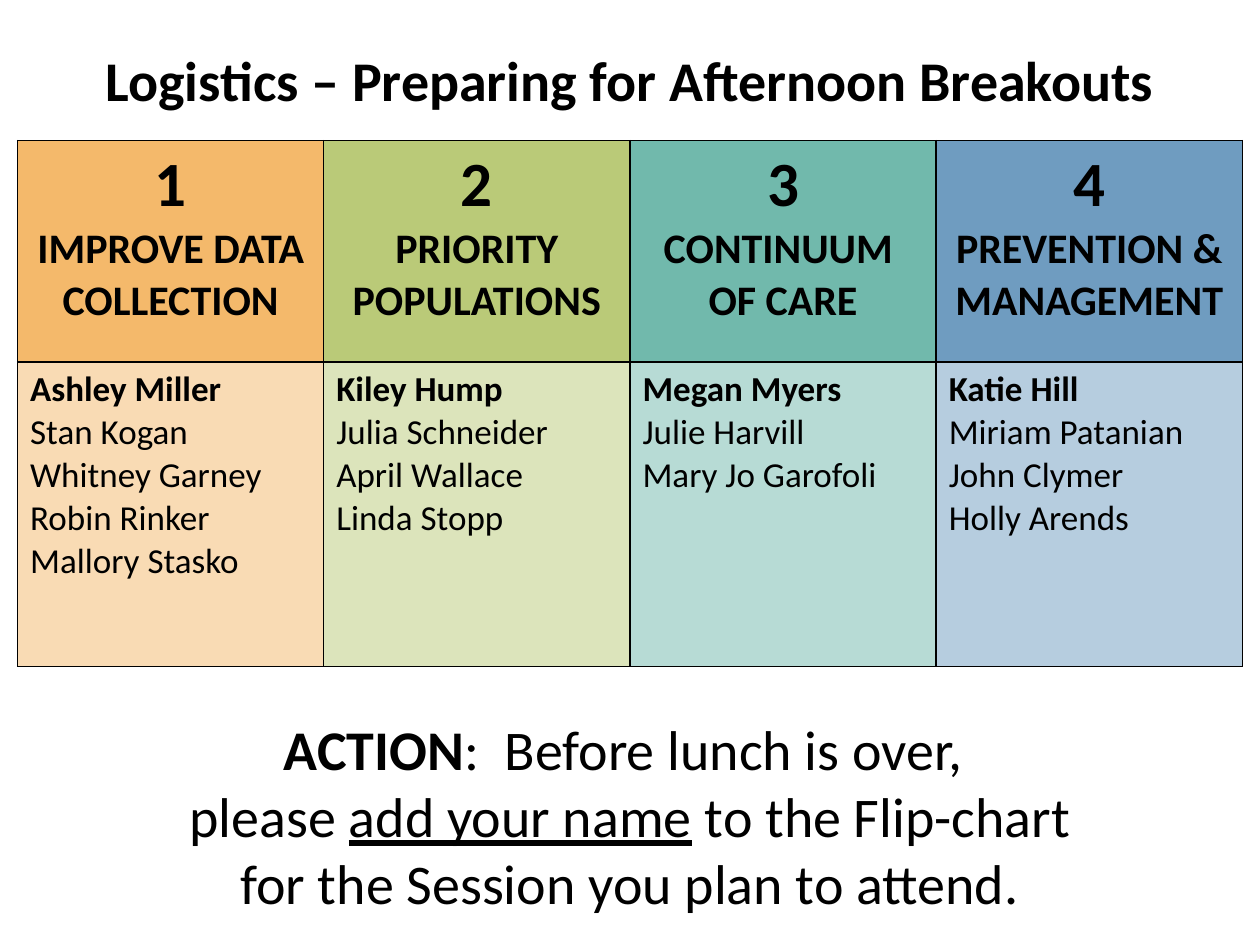
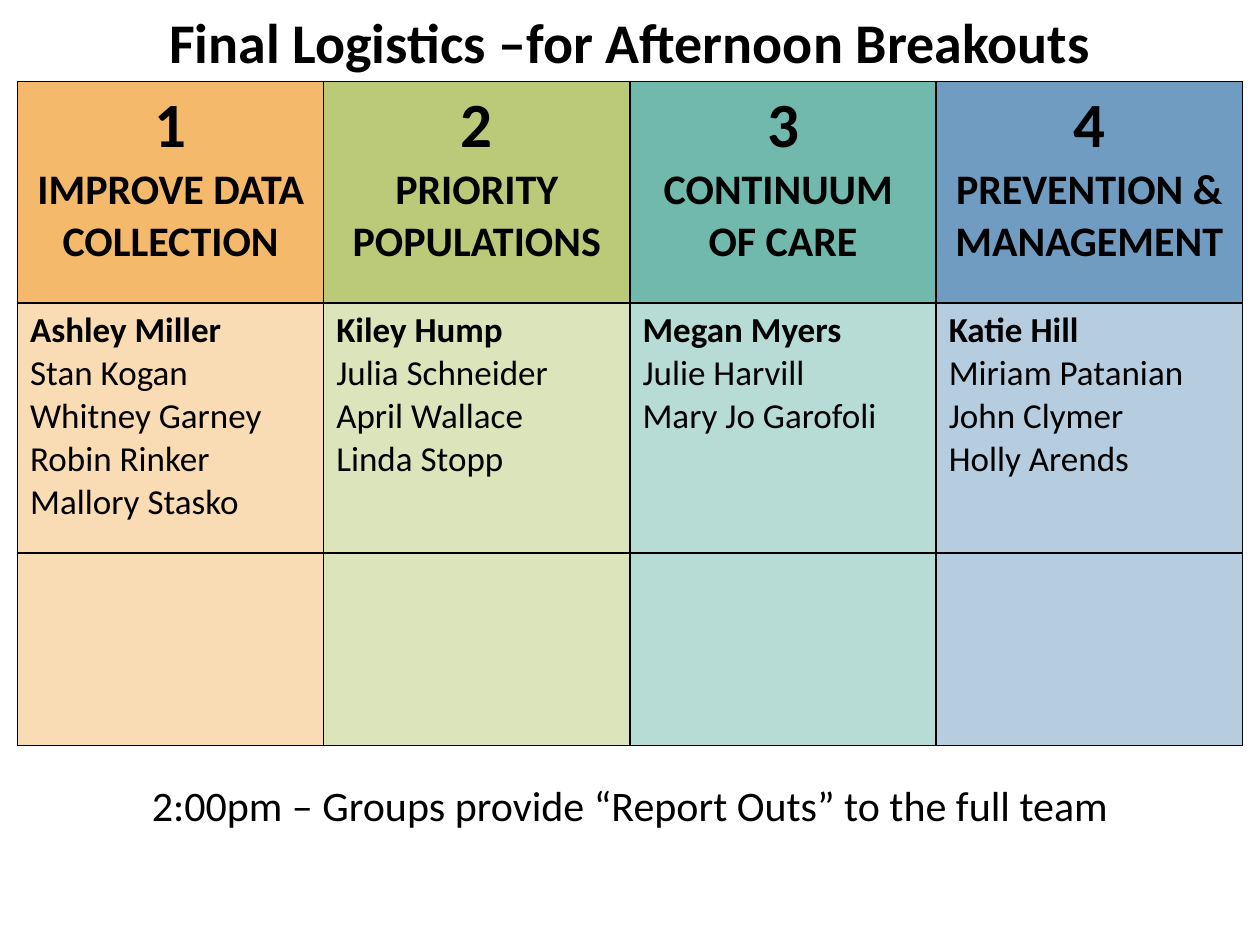
"""Build two slides about the afternoon breakout sessions."""
from lxml import etree
from pptx import Presentation
from pptx.dml.color import RGBColor
from pptx.enum.text import MSO_AUTO_SIZE, PP_ALIGN
from pptx.oxml.ns import qn
from pptx.util import Pt

CENTER, LEFT = PP_ALIGN.CENTER, PP_ALIGN.LEFT
FIT_SHAPE = MSO_AUTO_SIZE.SHAPE_TO_FIT_TEXT
BLACK = RGBColor(0x00, 0x00, 0x00)
ORANGE = RGBColor(0xF4, 0xB9, 0x6B)
GREEN = RGBColor(0xBA, 0xCA, 0x78)
TEAL = RGBColor(0x71, 0xB9, 0xAC)
BLUE = RGBColor(0x6F, 0x9C, 0xC0)
FONT = "Calibri"
MARGIN, WIDTH = 10, 700
HEADER_HEIGHT = 126.5

SESSIONS = [
    ("IMPROVE DATA COLLECTION", ORANGE,
     ["Ashley Miller", "Stan Kogan", "Whitney Garney", "Robin Rinker", "Mallory Stasko"]),
    ("PRIORITY POPULATIONS", GREEN,
     ["Kiley Hump", "Julia Schneider April Wallace", "Linda Stopp"]),
    ("CONTINUUM \nOF CARE", TEAL,
     ["Megan Myers", "Julie Harvill", "Mary Jo Garofoli"]),
    ("PREVENTION & MANAGEMENT", BLUE,
     ["Katie Hill", "Miriam Patanian John Clymer", "Holly Arends"]),
]

SLIDES = [
    {"title": "Logistics – Preparing for Afternoon Breakouts", "title_top": 22.5,
     "table_top": 80.3, "body_rows": [174],
     "note_top": 404.5, "note_height": 124, "note_size": 32,
     "note": [("ACTION", True, False),
              (":  Before lunch is over, \nplease ", False, False),
              ("add your name", False, True),
              (" to the Flip-chart\nfor the Session you plan to attend.", False, False)]},
    {"title": "Final Logistics –for Afternoon Breakouts", "title_top": 0.8,
     "table_top": 46.6, "body_rows": [143, 110],
     "note_top": 442, "note_height": 36, "note_size": 24,
     "note": [("2:00pm – Groups provide “Report Outs” to the full team", False, False)]},
]


def add_centered_text(slide, top, height, size, pieces):
    box = slide.shapes.add_textbox(Pt(MARGIN), Pt(top), Pt(WIDTH), Pt(height))
    box.text_frame.word_wrap = True
    box.text_frame.auto_size = FIT_SHAPE
    paragraph = box.text_frame.paragraphs[0]
    paragraph.alignment = CENTER
    paragraph.font.name, paragraph.font.size = FONT, Pt(size)
    paragraph.font.color.rgb = BLACK
    for text, bold, underline in pieces:
        for index, line in enumerate(text.split("\n")):
            if index:
                paragraph.add_line_break()
            run = paragraph.add_run()
            run.text = line
            run.font.bold, run.font.underline = bold, underline


def fill_cell(cell, color, lines, alignment, opacity=100):
    cell.fill.solid()
    cell.fill.fore_color.rgb = color
    properties = cell._tc.get_or_add_tcPr()
    if opacity < 100:
        tint = properties.find(".//" + qn("a:srgbClr"))
        etree.SubElement(tint, qn("a:alpha"), val=str(opacity * 1000))
    for position, side in enumerate(("lnL", "lnR", "lnT", "lnB")):
        border = etree.Element(qn("a:" + side), w=str(Pt(1)))
        ink = etree.SubElement(border, qn("a:solidFill"))
        etree.SubElement(ink, qn("a:srgbClr"), val=str(BLACK))
        properties.insert(position, border)
    for index, (text, size, bold) in enumerate(lines):
        frame = cell.text_frame
        paragraph = frame.add_paragraph() if index else frame.paragraphs[0]
        paragraph.text = text
        paragraph.alignment = alignment
        paragraph.font.name, paragraph.font.size = FONT, Pt(size)
        paragraph.font.bold = bold
        paragraph.font.color.rgb = BLACK


deck = Presentation()
deck.slide_width, deck.slide_height = Pt(720), Pt(540)

for content in SLIDES:
    slide = deck.slides.add_slide(deck.slide_layouts[6])
    row_heights = [HEADER_HEIGHT] + content["body_rows"]
    breakouts = slide.shapes.add_table(
        len(row_heights), len(SESSIONS), Pt(MARGIN), Pt(content["table_top"]),
        Pt(WIDTH), Pt(sum(row_heights))).table
    breakouts.first_row = breakouts.horz_banding = False
    for row, height in zip(breakouts.rows, row_heights):
        row.height = Pt(height)

    for column, (topic, color, people) in enumerate(SESSIONS):
        heading = [(str(column + 1), 36, True), (topic, 24, True)]
        fill_cell(breakouts.cell(0, column), color, heading, CENTER)
        team = [(person, 20, person == people[0]) for person in people]
        for row in range(1, len(row_heights)):
            fill_cell(breakouts.cell(row, column), color, team if row == 1 else [], LEFT, 50)

    add_centered_text(slide, content["title_top"], 46, 32, [(content["title"], True, False)])
    add_centered_text(slide, content["note_top"], content["note_height"],
                      content["note_size"], content["note"])

deck.save("out.pptx")
